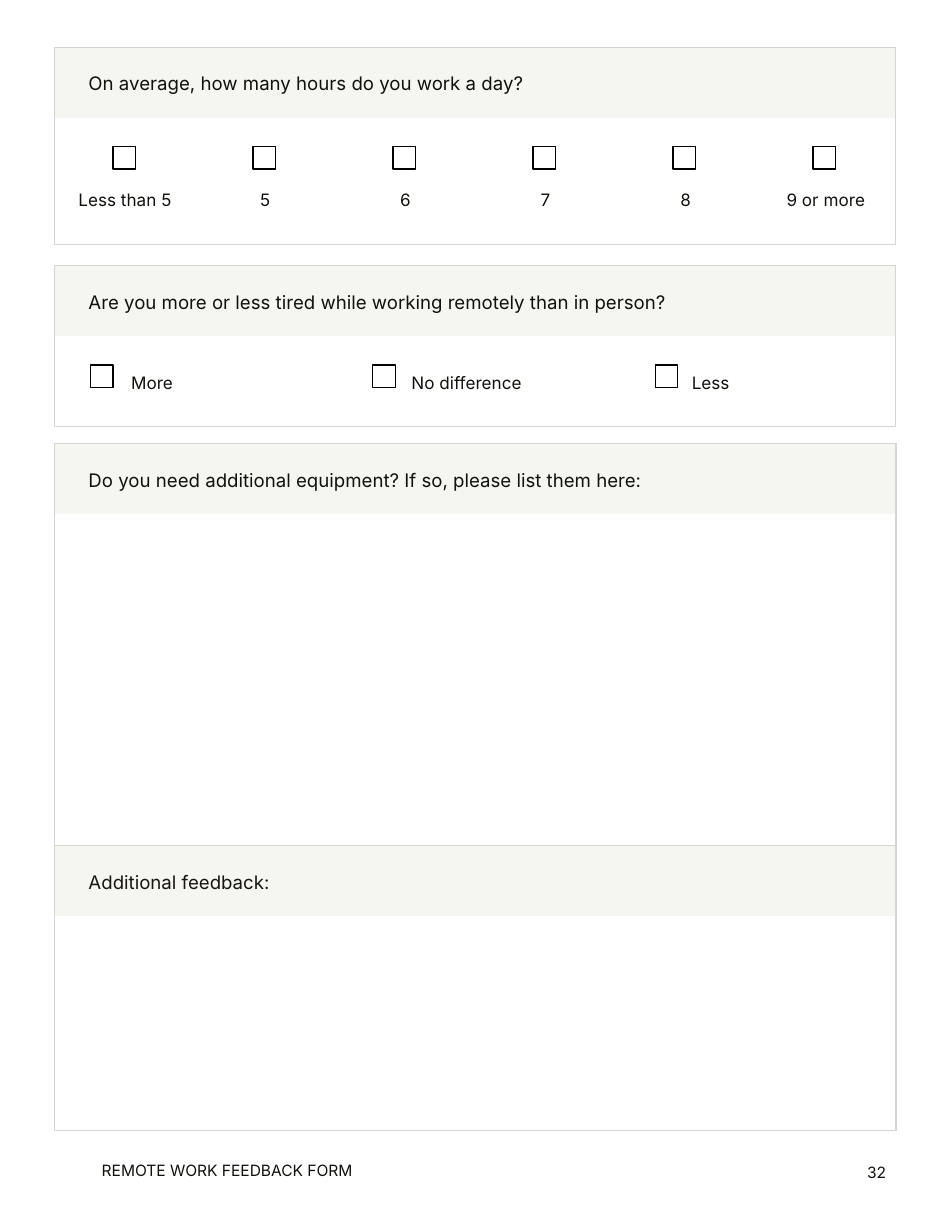
from lxml.etree import SubElement
from pptx import Presentation
from pptx.dml.color import RGBColor
from pptx.enum.shapes import MSO_SHAPE as Shape
from pptx.enum.text import MSO_ANCHOR as Anchor, PP_ALIGN as Align
from pptx.oxml.ns import qn
from pptx.util import Inches, Pt

COLORS = {"ink": "11110D", "soft_ink": "181610", "band": "F5F5F2",
          "border": "D5D5D2", "box": "000000"}
FONT = "Inter"
LEFT, WIDTH = 0.49, 7.51
HEADER_HEIGHT = 0.63
HEADER_MARGINS = (0.3, 0.2, 0.2, 0.2)
BOX_SIZE = 0.2


def rgb(name):
    return RGBColor.from_string(COLORS[name])


def write(frame, text, size=11, color="ink", align=Align.LEFT, spacing=1.0, indent=0):
    para = frame.paragraphs[0]
    para.alignment = align
    para.line_spacing = spacing
    if indent:
        para._p.get_or_add_pPr().set("marL", str(Inches(indent)))
    span = para.add_run()
    span.text = text
    span.font.name = FONT
    span.font.size = Pt(size)
    span.font.color.rgb = rgb(color)


def set_margins(target, left, top, right, bottom):
    target.margin_left, target.margin_top = Inches(left), Inches(top)
    target.margin_right, target.margin_bottom = Inches(right), Inches(bottom)


def set_borders(cell, sides):
    properties = cell._tc.get_or_add_tcPr()
    for side in "LRTB":
        line = SubElement(properties, qn(f"a:ln{side}"), w=str(Pt(0.75)))
        if side in sides:
            fill = SubElement(line, qn("a:solidFill"))
            SubElement(fill, qn("a:srgbClr"), val=COLORS["border"])
        else:
            SubElement(line, qn("a:noFill"))


def add_grid(page, top, columns, heights):
    frame = page.shapes.add_table(len(heights), columns, Inches(LEFT), Inches(top),
                                  Inches(WIDTH), Inches(sum(heights)))
    table = frame.table
    table.first_row = table.horz_banding = False
    for row, height in zip(table.rows, heights):
        row.height = Inches(height)
    for column in table.columns:
        column.width = Inches(WIDTH / columns)
    return table


def fill_header(table, row, text, color="ink"):
    cells = list(table.rows[row].cells)
    for cell in cells:
        set_borders(cell, "LTR")
    if len(cells) > 1:
        cells[0].merge(cells[-1])
    cell = cells[0]
    cell.fill.solid()
    cell.fill.fore_color.rgb = rgb("band")
    cell.vertical_anchor = Anchor.MIDDLE
    set_margins(cell, *HEADER_MARGINS)
    write(cell.text_frame, text, size=12, color=color, spacing=1.15)


def fill_body(table, row, labels=("",), margins=HEADER_MARGINS, anchor=Anchor.TOP, **style):
    last = len(labels) - 1
    for index, label in enumerate(labels):
        cell = table.cell(row, index)
        set_borders(cell, "B" + "L" * (index == 0) + "R" * (index == last))
        cell.fill.background()
        cell.vertical_anchor = anchor
        set_margins(cell, *margins)
        if label:
            write(cell.text_frame, label, spacing=1.15, **style)


def add_checkboxes(page, left, top, step, count):
    for index in range(count):
        box = page.shapes.add_shape(Shape.RECTANGLE, Inches(left + index * step),
                                    Inches(top), Inches(BOX_SIZE), Inches(BOX_SIZE))
        box.shadow.inherit = False
        box.fill.background()
        box.line.color.rgb = rgb("box")
        box.line.width = Pt(0.75)


def add_label(page, left, top, width, height, text, anchor=Anchor.TOP, **style):
    box = page.shapes.add_textbox(Inches(left), Inches(top), Inches(width), Inches(height))
    frame = box.text_frame
    frame.word_wrap = True
    frame.vertical_anchor = anchor
    set_margins(frame, 0.1, 0.1, 0.1, 0.1)
    write(frame, text, size=10, **style)


def add_hours_question(page):
    labels = ["Less than 5", "5", "6", "7", "8", "9 or more"]
    table = add_grid(page, 0.42, len(labels), [HEADER_HEIGHT, 1.13])
    fill_header(table, 0, "On average, how many hours do you work a day?")
    fill_body(table, 1, labels, margins=(0, 0.3, 0, 0.3), anchor=Anchor.BOTTOM,
              align=Align.CENTER)
    add_checkboxes(page, 1.01, 1.31, 1.25, len(labels))


def add_tiredness_question(page):
    labels = ["More", "No difference", "Less"]
    table = add_grid(page, 2.37, len(labels), [HEADER_HEIGHT, 0.81])
    fill_header(table, 0, "Are you more or less tired while working remotely than in person?")
    fill_body(table, 1, labels, margins=(0.3, 0.3, 0.2, 0.3), indent=0.38)
    add_checkboxes(page, 0.81, 3.26, 2.52, len(labels))


def add_open_questions(page):
    table = add_grid(page, 3.96, 1, [HEADER_HEIGHT, 2.96, HEADER_HEIGHT, 1.91])
    fill_header(table, 0, "Do you need additional equipment? If so, please list them here:")
    fill_body(table, 1)
    fill_header(table, 2, "Additional feedback:", color="soft_ink")
    fill_body(table, 3)


def main():
    deck = Presentation()
    deck.slide_width, deck.slide_height = Inches(8.5), Inches(11)
    page = deck.slides.add_slide(deck.slide_layouts[6])
    add_label(page, 0.81, 10.28, 3.28, 0.37, "REMOTE WORK FEEDBACK FORM")
    add_label(page, 7.6, 10.11, 0.41, 0.71, "32", anchor=Anchor.MIDDLE, align=Align.RIGHT)
    add_hours_question(page)
    add_tiredness_question(page)
    add_open_questions(page)
    deck.save("out.pptx")


if __name__ == "__main__":
    main()
